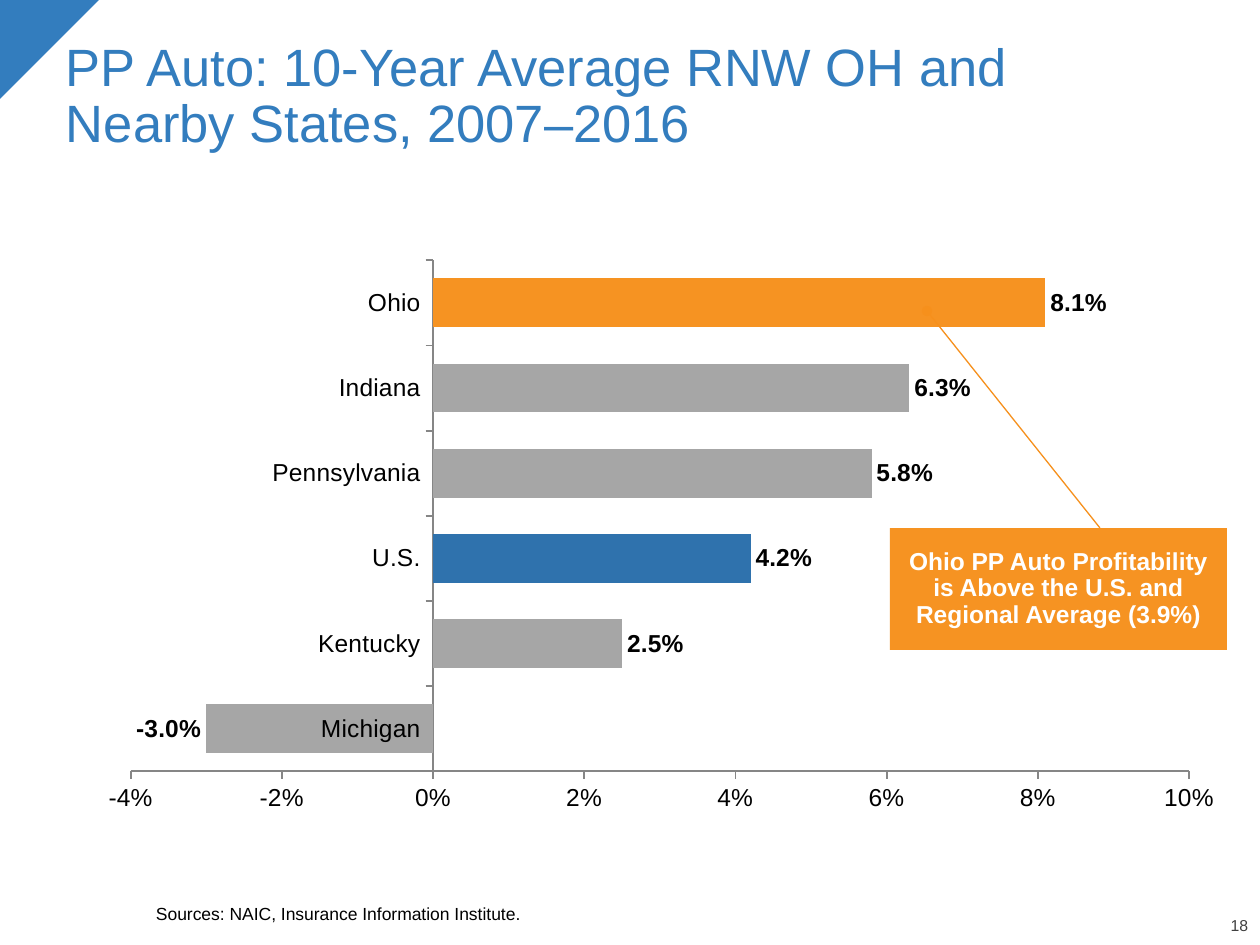
from lxml import etree
from pptx import Presentation
from pptx.chart.data import CategoryChartData
from pptx.dml.color import RGBColor
from pptx.enum.chart import XL_CHART_TYPE as ChartType, XL_LABEL_POSITION as LabelPos
from pptx.enum.chart import XL_TICK_MARK as Tick
from pptx.enum.shapes import MSO_CONNECTOR as Connector, MSO_SHAPE as Shape
from pptx.enum.text import MSO_ANCHOR as Anchor, PP_ALIGN as Align
from pptx.oxml import parse_xml
from pptx.oxml.ns import nsdecls, qn
from pptx.util import Pt

PX = 914400 / 126
FONT = "Arial"
COLORS = {
    "title": "337DBE", "us": "2F72AD", "ohio": "F69322", "pointer": "F6901C",
    "state": "A6A6A6", "axis": "868686", "page": "404040",
    "text": "000000", "white": "FFFFFF",
}
RETURNS = {
    "Michigan": -0.03, "Kentucky": 0.025, "U.S.": 0.042,
    "Pennsylvania": 0.058, "Indiana": 0.063, "Ohio": 0.081,
}
HIGHLIGHTS = {"U.S.": "us", "Ohio": "ohio"}


def px(*lengths):
    return [round(length * PX) for length in lengths]


def rgb(name):
    return RGBColor.from_string(COLORS[name])


def style_font(font, size, color, bold=False):
    font.name, font.size, font.bold = FONT, Pt(size), bold
    font.color.rgb = rgb(color)


def write(frame, lines, size, color, align=Align.LEFT, anchor=Anchor.MIDDLE,
          bold=False, insets=(0, 0), before=0):
    """Fill a text frame with one paragraph, breaking between lines."""
    frame.word_wrap = True
    frame.vertical_anchor = anchor
    side, edge = px(*insets)
    frame.margin_left = frame.margin_right = side
    frame.margin_top = frame.margin_bottom = edge
    paragraph = frame.paragraphs[0]
    paragraph.alignment = align
    paragraph.line_spacing = 0.9
    paragraph.space_before = Pt(before)
    for index, line in enumerate(lines):
        if index:
            paragraph.add_line_break()
        run = paragraph.add_run()
        run.text = line
        style_font(run.font, size, color, bold)


def add_title(slide, box, lines):
    title = slide.shapes.title
    title.left, title.top, title.width, title.height = px(*box)
    write(title.text_frame, lines, 30, "title", insets=(13, 6))


def add_text(slide, box, text, size, color, align=Align.LEFT):
    label = slide.shapes.add_textbox(*px(*box))
    write(label.text_frame, [text], size, color, align, Anchor.BOTTOM)


def add_block(slide, kind, box, color):
    block = slide.shapes.add_shape(kind, *px(*box))
    block.shadow.inherit = False
    block.fill.solid()
    block.fill.fore_color.rgb = rgb(color)
    block.line.fill.background()
    return block


def add_pointer(slide, start, end):
    pointer = slide.shapes.add_connector(Connector.STRAIGHT, *px(*start, *end))
    pointer.line.color.rgb = rgb("pointer")
    pointer.line.width = Pt(0.75)
    etree.SubElement(pointer.line._get_or_add_ln(), qn("a:tailEnd"), type="oval")
    etree.SubElement(pointer._element.spPr, qn("a:effectLst"))


def style_axis(axis):
    axis.has_major_gridlines = False
    axis.major_tick_mark, axis.minor_tick_mark = Tick.OUTSIDE, Tick.NONE
    axis.format.line.color.rgb = rgb("axis")
    axis.format.line.width = Pt(1)
    style_font(axis.tick_labels.font, 14, "text")


def place_plot(chart, **fractions):
    """Fix the inner plot area as fractions of the chart."""
    plot_area = chart._chartSpace.chart.plotArea
    for old in plot_area.findall(qn("c:layout")):
        plot_area.remove(old)
    sizes = "".join(f'<c:{key} val="{value}"/>' for key, value in fractions.items())
    plot_area.insert(0, parse_xml(
        f'<c:layout {nsdecls("c")}><c:manualLayout><c:layoutTarget val="inner"/>'
        f'<c:xMode val="edge"/><c:yMode val="edge"/>{sizes}'
        '</c:manualLayout></c:layout>'))


def add_returns_chart(slide, box):
    data = CategoryChartData(number_format="0.0%")
    data.categories = list(RETURNS)
    data.add_series("Series 1", list(RETURNS.values()))
    chart = slide.shapes.add_chart(ChartType.BAR_CLUSTERED, *px(*box), data).chart
    chart.has_legend = chart.has_title = False
    style_font(chart.font, 14, "text")
    place_plot(chart, x=0.07, y=0.075, w=0.907, h=0.81)

    # Axes
    style_axis(chart.category_axis)
    percent = chart.value_axis
    style_axis(percent)
    percent.minimum_scale, percent.maximum_scale = -0.04, 0.1
    percent.major_unit = 0.02
    percent.tick_labels.number_format = "0%"
    percent.tick_labels.number_format_is_linked = False

    # Bars and value labels
    plot = chart.plots[0]
    plot.gap_width = 75
    plot.vary_by_categories = False
    returns = plot.series[0]
    returns.invert_if_negative = False
    returns.format.fill.solid()
    returns.format.fill.fore_color.rgb = rgb("state")
    for index, region in enumerate(RETURNS):
        if region in HIGHLIGHTS:
            fill = returns.points[index].format.fill
            fill.solid()
            fill.fore_color.rgb = rgb(HIGHLIGHTS[region])
    labels = returns.data_labels
    labels.show_value = True
    labels.position = LabelPos.OUTSIDE_END
    labels.number_format, labels.number_format_is_linked = "0.0%", False
    style_font(labels.font, 14, "text", bold=True)


def main():
    prs = Presentation()
    prs.slide_width, prs.slide_height = px(1260, 945)
    slide = prs.slides.add_slide(prs.slide_layouts[5])

    # Corner, title and page number
    corner = add_block(slide, Shape.RIGHT_TRIANGLE, (-1, 0, 100, 100), "title")
    corner.rotation = 90
    add_title(slide, (53, 32, 1165, 131),
              ["PP Auto: 10-Year Average RNW OH and ", "Nearby States, 2007–2016"])
    add_text(slide, (1188, 918, 60, 17), "18", 9, "page", Align.RIGHT)

    # Chart and source
    add_returns_chart(slide, (49, 213, 1167, 631))
    add_text(slide, (156, 867, 1058, 57),
             "Sources: NAIC, Insurance Information Institute.", 10, "text")

    # Callout on Ohio
    callout = add_block(slide, Shape.RECTANGLE, (890, 528, 337, 122), "ohio")
    write(callout.text_frame,
          ["Ohio PP Auto Profitability is Above the U.S. and Regional Average (3.9%)"],
          14, "white", Align.CENTER, bold=True, insets=(13, 0))
    add_pointer(slide, (1100, 528), (927, 311))

    prs.save("out.pptx")


if __name__ == "__main__":
    main()
